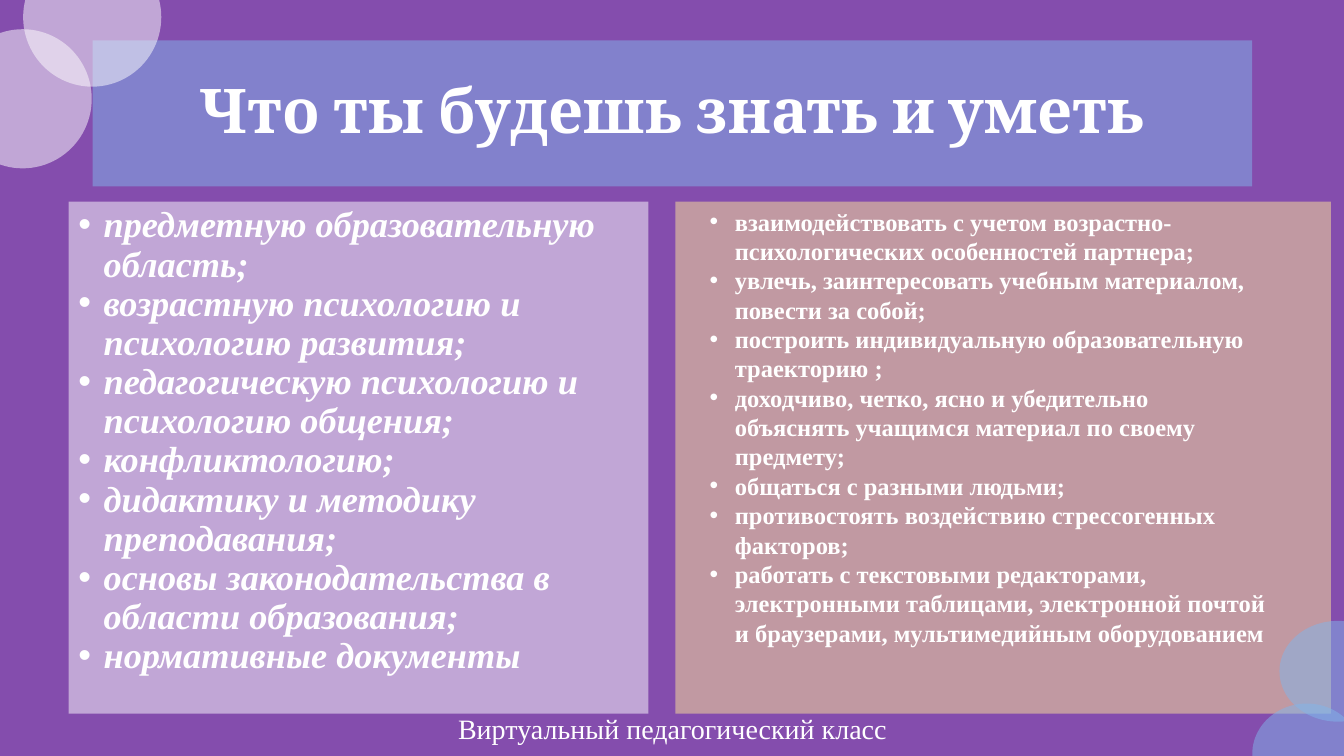
from pptx import Presentation, util as u
from pptx.dml.color import RGBColor
from pptx.enum import shapes, text
from pptx.oxml.ns import qn
from lxml import etree

PURPLE = RGBColor(0x84, 0x4D, 0xAD)
WHITE = RGBColor(0xFF, 0xFF, 0xFF)
SKY = RGBColor(0x81, 0xB6, 0xEB)
SAND = RGBColor(0xFF, 0xE6, 0x99)
SERIF = "Times New Roman"

TITLE = ["Что ты будешь знать и уметь"]
KNOW = [
    "предметную образовательную область;",
    "возрастную психологию и психологию развития;",
    "педагогическую психологию и психологию общения;",
    "конфликтологию;",
    "дидактику и методику преподавания;",
    "основы законодательства в области образования;",
    "нормативные документы",
]
SKILLS = [
    "взаимодействовать с учетом возрастно-психологических особенностей партнера;",
    "увлечь, заинтересовать учебным материалом, повести за собой;",
    "построить индивидуальную образовательную траекторию ;",
    "доходчиво, четко, ясно и убедительно объяснять учащимся материал по своему предмету;",
    "общаться с разными людьми;",
    "противостоять воздействию стрессогенных факторов;",
    "работать с текстовыми редакторами, электронными таблицами, электронной почтой "
    "и браузерами, мультимедийным оборудованием",
]
FOOTER = ["Виртуальный педагогический класс"]

TOP, WIDE, HIGH = 2, 5.75, 5.08
BANNER = (0.92, 0.4, 2 * WIDE, 1.45)
PANELS = [
    ((6.7, TOP, 6.5, HIGH), SAND),
    ((0.68, TOP, WIDE, HIGH), WHITE),
    (BANNER, SKY),
]
DISCS = [
    ((12.42, 6.98, 1.08, 1), SKY),
    ((-0.46, 0.29, 1.37, 1.38), WHITE),
    ((0.23, -0.52, 1.37, 1.38), WHITE),
    ((12.69, 6.16, 1.16, 1), SKY),
]

deck = Presentation()
deck.slide_width, deck.slide_height = u.Inches(13.33), u.Inches(7.5)
slide = deck.slides.add_slide(deck.slide_layouts[6])
slide.background.fill.solid()
slide.background.fill.fore_color.rgb = PURPLE


def place(box):
    return [u.Inches(v) for v in box]


def glass(kind, box, color):
    shape = slide.shapes.add_shape(kind, *place(box))
    shape.shadow.inherit = False
    shape.line.fill.background()
    shape.fill.solid()
    shape.fill.fore_color.rgb = color
    tint = shape.fill._xPr.find(".//" + qn("a:srgbClr"))
    etree.SubElement(tint, qn("a:alpha"), val="50000")


def write(box, lines, size, font=SERIF, bold=True, italic=False, space=1.0, list_=True):
    frame = slide.shapes.add_textbox(*place(box)).text_frame
    frame.word_wrap = True
    frame.text = "\n".join(lines)
    if not list_:
        frame.vertical_anchor = text.MSO_ANCHOR.MIDDLE
    for para in frame.paragraphs:
        para.line_spacing = space
        if list_:
            props = para._p.get_or_add_pPr()
            props.set("marL", str(u.Inches(0.25)))
            props.set("indent", str(-u.Inches(0.25)))
            etree.SubElement(props, qn("a:buFont"), typeface="Arial")
            etree.SubElement(props, qn("a:buChar"), char="•")
        else:
            para.alignment = text.PP_ALIGN.CENTER
        for run in para.runs:
            run.font.name, run.font.size = font, u.Pt(size)
            run.font.bold, run.font.italic = bold, italic
            run.font.color.rgb = WHITE


for box, color in PANELS:
    glass(shapes.MSO_SHAPE.RECTANGLE, box, color)
write(BANNER, TITLE, 44, font="Cambria", space=0.9, list_=False)
write((0.68, TOP, WIDE, HIGH), KNOW, 25.9, italic=True, space=0.9)
for box, color in DISCS:
    glass(shapes.MSO_SHAPE.OVAL, box, color)
write((6.94, TOP, WIDE, 5.34), SKILLS, 17.5)
write((4.09, 7.07, 5.16, 0.31), FOOTER, 20, bold=False, list_=False)

deck.save("out.pptx")
